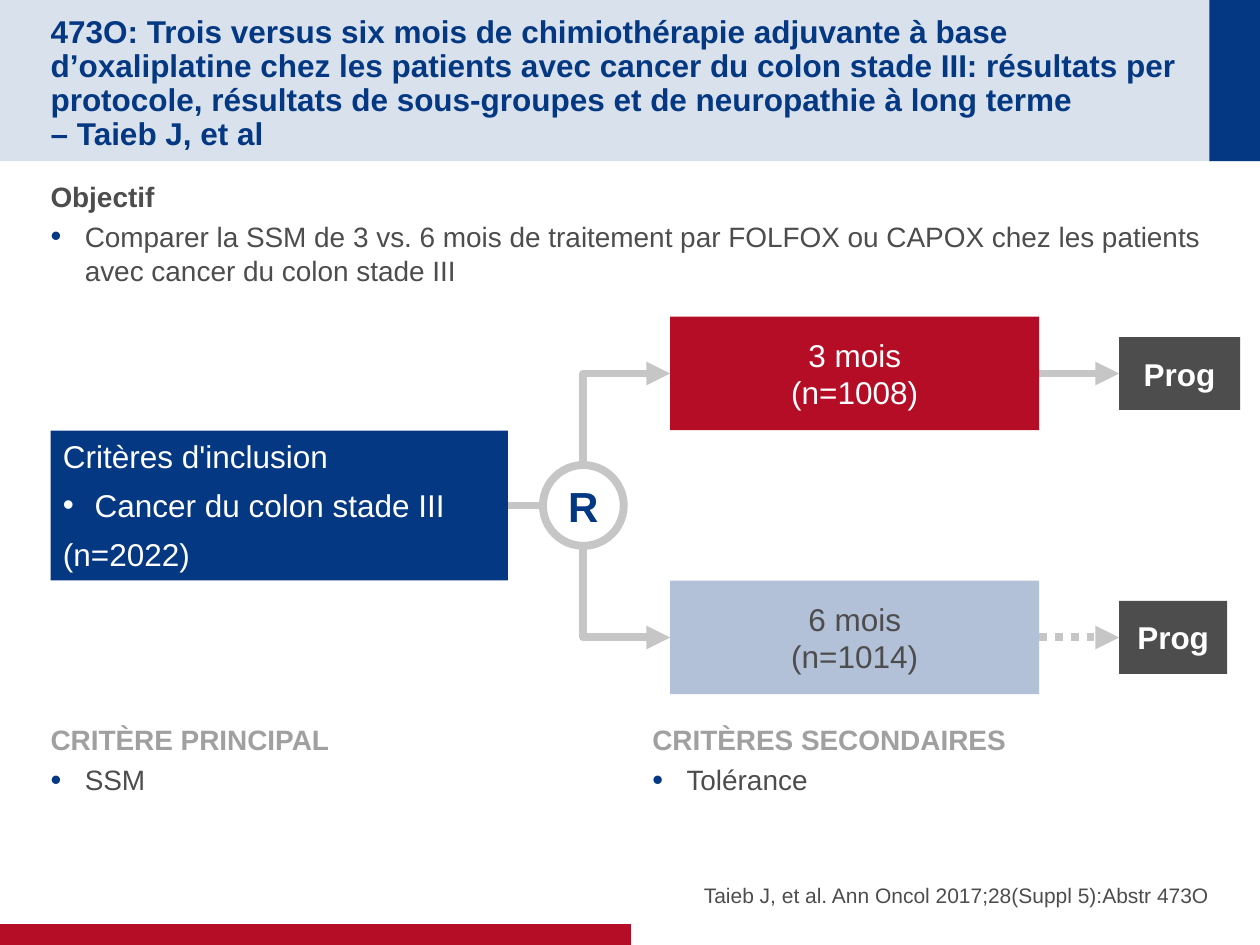
import pptx
import pptx.util
import pptx.dml.color
import pptx.enum.dml
import pptx.enum.shapes
import pptx.enum.text
import pptx.oxml.ns
from lxml import etree

Cm, Pt = pptx.util.Cm, pptx.util.Pt
RGB = pptx.dml.color.RGBColor
SHAPE = pptx.enum.shapes.MSO_SHAPE
LINE = pptx.enum.shapes.MSO_CONNECTOR
ANCHOR = pptx.enum.text.MSO_ANCHOR
ALIGN = pptx.enum.text.PP_ALIGN
qn = pptx.oxml.ns.qn

NAVY, RED, PALE = RGB(0x04, 0x38, 0x82), RGB(0xB6, 0x0D, 0x27), RGB(0xB2, 0xC0, 0xD8)
DARK, GREY, HEAD = RGB(0x4D, 0x4D, 0x4D), RGB(0xC6, 0xC6, 0xC6), RGB(0xA0, 0xA0, 0xA0)
WHITE = RGB(0xFF, 0xFF, 0xFF)

# Content
TITLE = ("473O: Trois versus six mois de chimiothérapie adjuvante à base "
         "d’oxaliplatine chez les patients avec cancer du colon stade III: "
         "résultats per protocole, résultats de sous-groupes et de neuropathie "
         "à long terme \v– Taieb J, et al")
# Sections: box (cm), side inset, heading, heading colour, bullet
SECTIONS = [
    ((1.02, 3.48, 23.37, 4), 0, "Objectif", DARK,
     "Comparer la SSM de 3 vs. 6 mois de traitement par FOLFOX ou CAPOX "
     "chez les patients avec cancer du colon stade III"),
    ((1.02, 14.43, 11.48, 2.41), 0, "CRITÈRE PRINCIPAL", HEAD, "SSM"),
    ((12.9, 14.43, 11.48, 2.41), 0.25, "CRITÈRES SECONDAIRES", HEAD, "Tolérance"),
]
INCLUSION = ["Critères d'inclusion", "Cancer du colon stade III", "(n=2022)"]
# Arms: direction, lines, fill, text colour, width of end box, dotted arrow
ARMS = [
    (-1, ["3 mois", "(n=1008)"], RED, WHITE, 2.44, False),
    (1, ["6 mois", "(n=1014)"], PALE, DARK, 2.18, True),
]
SOURCE = "Taieb J, et al. Ann Oncol 2017;28(Suppl 5):Abstr 473O"

# Bands: box (cm), colour, opacity in percent
BANDS = [((0, 0, 25.4, 3.25), NAVY, 15), ((24.38, 0, 1.02, 3.25), NAVY, 100),
         ((0, 18.63, 12.72, 0.42), RED, 100)]

# Diagram geometry (cm)
MID_Y, ARM_DY = 10.19, 2.66
INC_X, INC_W, INC_H = 1.02, 9.22, 3.02
R_X, R_D = 11.76, 1.63
ARM_X, ARM_W, ARM_H = 13.51, 7.44, 2.29
END_X, END_H = 22.56, 1.47

prs = pptx.Presentation()
prs.slide_width, prs.slide_height = Cm(25.4), Cm(19.05)
s = prs.slides.add_slide(prs.slide_layouts[5])


def frame(sp, insets, anchor=ANCHOR.TOP, wrap=True):
    tf = sp.text_frame
    left, top, right, bottom = (Cm(v) for v in insets)
    values = dict(margin_left=left, margin_top=top, margin_right=right,
                  margin_bottom=bottom, vertical_anchor=anchor, word_wrap=wrap,
                  auto_size=pptx.enum.text.MSO_AUTO_SIZE.NONE)
    for name, value in values.items():
        setattr(tf, name, value)
    return tf


def write(p, text, size, color, bold=False, align=ALIGN.LEFT, after=0):
    p.text = text
    p.alignment, p.space_after, p.space_before = align, Pt(after), Pt(0)
    for r in p.runs:
        values = dict(name="Arial", size=Pt(size), bold=bold)
        for name, value in values.items():
            setattr(r.font, name, value)
        r.font.color.rgb = color


def bullet(p, indent, color, percent):
    pPr = p._p.get_or_add_pPr()
    pPr.set("marL", str(Cm(indent)))
    pPr.set("indent", str(-Cm(indent)))
    clr = etree.SubElement(pPr, qn("a:buClr"))
    etree.SubElement(clr, qn("a:srgbClr"), val=str(color))
    etree.SubElement(pPr, qn("a:buSzPct"), val=str(percent * 1000))
    etree.SubElement(pPr, qn("a:buFont"), typeface="Arial")
    etree.SubElement(pPr, qn("a:buChar"), char="•")


def block(box, fill=None, kind=SHAPE.RECTANGLE):
    sp = s.shapes.add_shape(kind, *(Cm(v) for v in box))
    sp.shadow.inherit = False
    sp.line.fill.background()
    if fill is None:
        sp.fill.background()
    else:
        sp.fill.solid()
        sp.fill.fore_color.rgb = fill
    return sp


def label(box, fill, lines, color, bold=False):
    tf = frame(block(box, fill), (0.25, 0, 0.25, 0), ANCHOR.MIDDLE)
    for i, text in enumerate(lines):
        p = tf.add_paragraph() if i else tf.paragraphs[0]
        write(p, text, 18, color, bold, ALIGN.CENTER)


def connect(x1, y1, x2, y2, kind=LINE.STRAIGHT, arrow=True, dotted=False):
    c = s.shapes.add_connector(kind, Cm(x1), Cm(y1), Cm(x2), Cm(y2))
    c.line.color.rgb, c.line.width = GREY, Pt(4.5)
    if dotted:
        c.line.dash_style = pptx.enum.dml.MSO_LINE.ROUND_DOT
    if arrow:
        etree.SubElement(c.line._get_or_add_ln(), qn("a:tailEnd"), type="triangle")
    etree.SubElement(c._element.spPr, qn("a:effectLst"))
    return c


def bend(x1, y1, x2, y2):
    """Go vertically from the start, then right: a rotated one-corner elbow."""
    w, h = abs(y2 - y1), x2 - x1
    cx, cy = (x1 + x2) / 2, (y1 + y2) / 2
    up = 1 if y2 < y1 else -1
    c = connect(cx + w / 2, cy + up * h / 2, cx - w / 2, cy - up * h / 2, LINE.ELBOW)
    spPr = c._element.spPr
    spPr.find(qn("a:prstGeom")).set("prst", "bentConnector2")
    spPr.find(qn("a:xfrm")).set("rot", str((90 if up == 1 else 270) * 60000))


# Bands
for box, color, opacity in BANDS:
    sp = block(box, color)
    if opacity < 100:
        clr = sp._element.spPr.find(qn("a:solidFill")).find(qn("a:srgbClr"))
        etree.SubElement(clr, qn("a:alpha"), val=str(opacity * 1000))

# Title, brought in front of its band
title = s.shapes.title
title.left, title.top, title.width, title.height = Cm(1.02), Cm(0.51), Cm(22.89), Cm(2.24)
p = frame(title, (0, 0.13, 0, 0), ANCHOR.MIDDLE).paragraphs[0]
write(p, TITLE, 18, NAVY, True)
p.line_spacing = 0.9
s.shapes._spTree.append(title._element)

# Text sections
for box, side, heading, color, item in SECTIONS:
    sp = s.shapes.add_textbox(*(Cm(v) for v in box))
    tf = frame(sp, (side, 0.13, side, 0.13))
    write(tf.paragraphs[0], heading, 16, color, True, after=4)
    p = tf.add_paragraph()
    write(p, item, 16, DARK, after=4)
    bullet(p, 0.69, NAVY, 110)

# Inclusion criteria
sp = block((INC_X, MID_Y - INC_H / 2, INC_W, INC_H), NAVY, SHAPE.ROUNDED_RECTANGLE)
sp.adjustments[0] = 0
tf = frame(sp, (0.25, 0.13, 0.25, 0.13))
for i, text in enumerate(INCLUSION):
    p = tf.add_paragraph() if i else tf.paragraphs[0]
    write(p, text, 18, WHITE, after=6.5)
bullet(tf.paragraphs[1], 0.64, WHITE, 100)

# Randomisation
connect(INC_X + INC_W, MID_Y, R_X - R_D / 2, MID_Y, arrow=False)
sp = block((R_X - R_D / 2, MID_Y - R_D / 2, R_D, R_D), kind=SHAPE.OVAL)
sp.line.color.rgb, sp.line.width = GREY, Pt(4.5)
tf = frame(sp, (0.25, 0.13, 0.25, 0.13), ANCHOR.MIDDLE, False)
write(tf.paragraphs[0], "R", 24, NAVY, True, ALIGN.CENTER)

# Treatment arms
for side, lines, fill, color, end_w, dotted in ARMS:
    y = MID_Y + side * ARM_DY
    bend(R_X, MID_Y + side * R_D / 2, ARM_X, y)
    connect(ARM_X + ARM_W, y, END_X, y, dotted=dotted)
    label((ARM_X, y - ARM_H / 2, ARM_W, ARM_H), fill, lines, color)
    label((END_X, y - END_H / 2, end_w, END_H), DARK, ["Prog"], WHITE, True)

# Reference
sp = s.shapes.add_textbox(Cm(12.9), Cm(16.94), Cm(11.48), Cm(1.35))
tf = frame(sp, (0, 0, 0, 0), ANCHOR.BOTTOM)
write(tf.paragraphs[0], SOURCE, 12, DARK, align=ALIGN.RIGHT, after=4)

prs.save("out.pptx")
